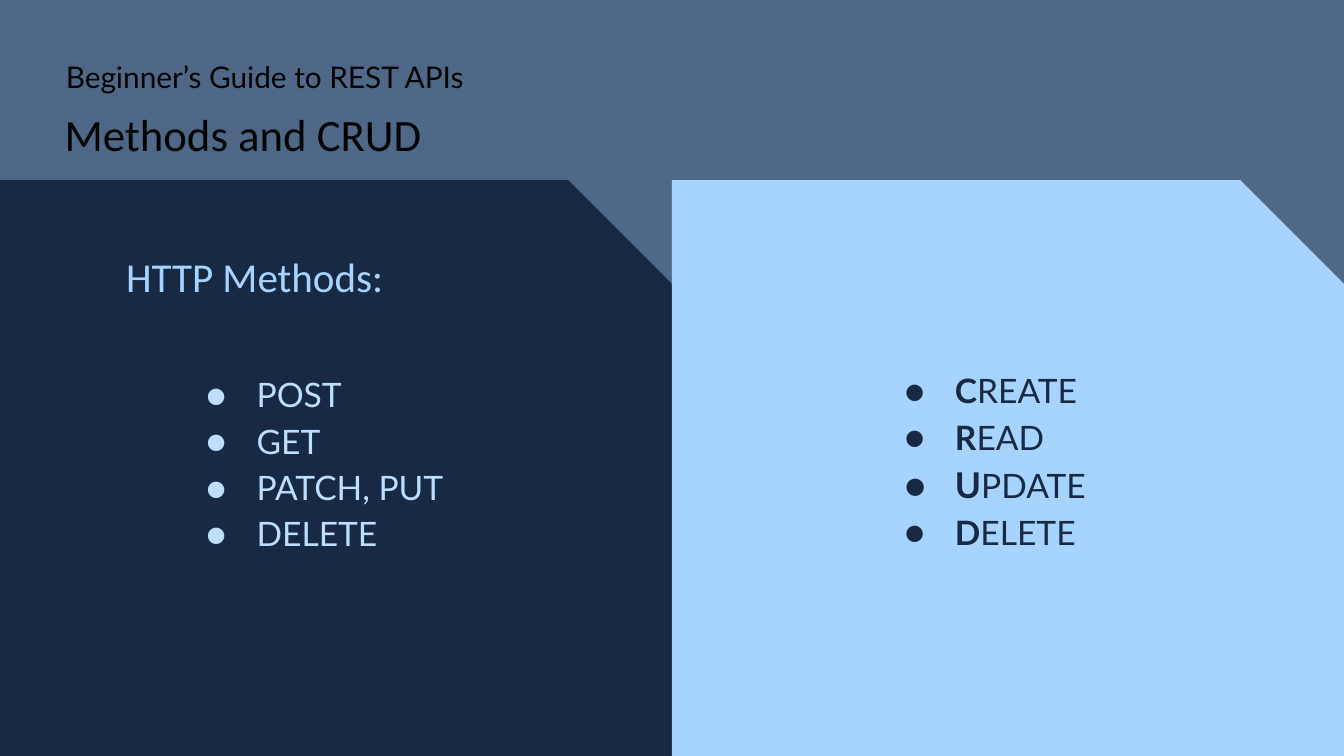
from lxml import etree
from pptx import Presentation
from pptx import util as u
from pptx.dml.color import RGBColor
from pptx.enum import shapes, text
from pptx.oxml.ns import qn

SCALE = 4572
WIDTH, HEIGHT, PANEL_TOP = 2000, 1125, 268
NAVY, SKY, PALE, SLATE, BLACK = "182A43", "A7D4FF", "BEDEFF", "4F6887", "000000"
METHODS = ["POST", "GET", "PATCH, PUT", "DELETE"]
CRUD = [("C", "REATE", 18), ("R", "EAD", 18), ("U", "PDATE", 19), ("D", "ELETE", 18)]


def px(length):
    """Turn px, 200 to the inch, into EMU."""
    return u.Emu(length * SCALE)


def color(code):
    """Return the colour of a hex string."""
    return RGBColor.from_string(code)


def add_panel(slide, left, fill):
    """Add a half-width panel with its top right corner cut off."""
    panel = slide.shapes.add_shape(
        shapes.MSO_SHAPE.SNIP_1_RECTANGLE,
        px(left), px(PANEL_TOP), px(WIDTH // 2), px(HEIGHT - PANEL_TOP))
    panel.adjustments[0] = 0.18
    panel.shadow.inherit = False
    panel.fill.solid()
    panel.fill.fore_color.rgb = color(fill)
    panel.line.fill.background()


def add_frame(slide, box, insets):
    """Add a wrapping text box and return its text frame."""
    frame = slide.shapes.add_textbox(*map(px, box)).text_frame
    frame.word_wrap = True
    frame.vertical_anchor = text.MSO_ANCHOR.TOP
    frame.margin_left, frame.margin_top, frame.margin_right, frame.margin_bottom = map(px, insets)
    return frame


def add_run(paragraph, words, size, font, ink, bold=False):
    """Add one styled run to a paragraph."""
    run = paragraph.add_run()
    run.text = words
    run.font.size = u.Pt(size)
    run.font.name = font
    run.font.bold = bold
    run.font.color.rgb = color(ink)


def add_line(slide, box, insets, words, size, font, ink, spacing=1.0):
    """Add a text box holding one line."""
    paragraph = add_frame(slide, box, insets).paragraphs[0]
    paragraph.line_spacing = spacing
    add_run(paragraph, words, size, font, ink)


def set_bullet(paragraph, ink):
    """Give a paragraph a hanging round bullet."""
    props = paragraph._p.get_or_add_pPr()
    props.set("marL", str(px(100)))
    props.set("indent", str(px(-75)))
    tint = etree.SubElement(props, qn("a:buClr"))
    etree.SubElement(tint, qn("a:srgbClr"), val=ink)
    etree.SubElement(props, qn("a:buFont"), typeface="Lato")
    etree.SubElement(props, qn("a:buChar"), char="●")


def add_bullets(slide, box, items, ink):
    """Add a bulleted list whose items are lists of (words, size, bold)."""
    frame = add_frame(slide, box, (0, 0, 20, 20))
    for index, parts in enumerate(items):
        paragraph = frame.add_paragraph() if index else frame.paragraphs[0]
        paragraph.line_spacing = 1.15
        set_bullet(paragraph, ink)
        for words, size, bold in parts:
            add_run(paragraph, words, size, "Lato", ink, bold)


def main():
    """Build the slide and save it."""
    deck = Presentation()
    deck.slide_width, deck.slide_height = px(WIDTH), px(HEIGHT)
    slide = deck.slides.add_slide(deck.slide_layouts[6])
    slide.background.fill.solid()
    slide.background.fill.fore_color.rgb = color(SLATE)

    add_panel(slide, 0, NAVY)
    add_line(slide, (96, 168, 1104, 70), (0, 0, 20, 0),
             "Methods and CRUD", 24, "Calibri", BLACK, 0.9)
    add_line(slide, (98, 87, 1168, 50), (0, 0, 20, 0),
             "Beginner’s Guide to REST APIs", 16, "Lato", BLACK)
    add_bullets(slide, (282, 548, 426, 500), [[(name, 18, False)] for name in METHODS], PALE)
    add_panel(slide, WIDTH // 2, SKY)
    add_bullets(slide, (1321, 542, 358, 500),
                [[(initial, size, True), (rest, 18, False)] for initial, rest, size in CRUD], NAVY)
    add_line(slide, (168, 354, 788, 76), (20, 20, 20, 20),
             "HTTP Methods:", 22, "Calibri", SKY)
    deck.save("out.pptx")


if __name__ == "__main__":
    main()
